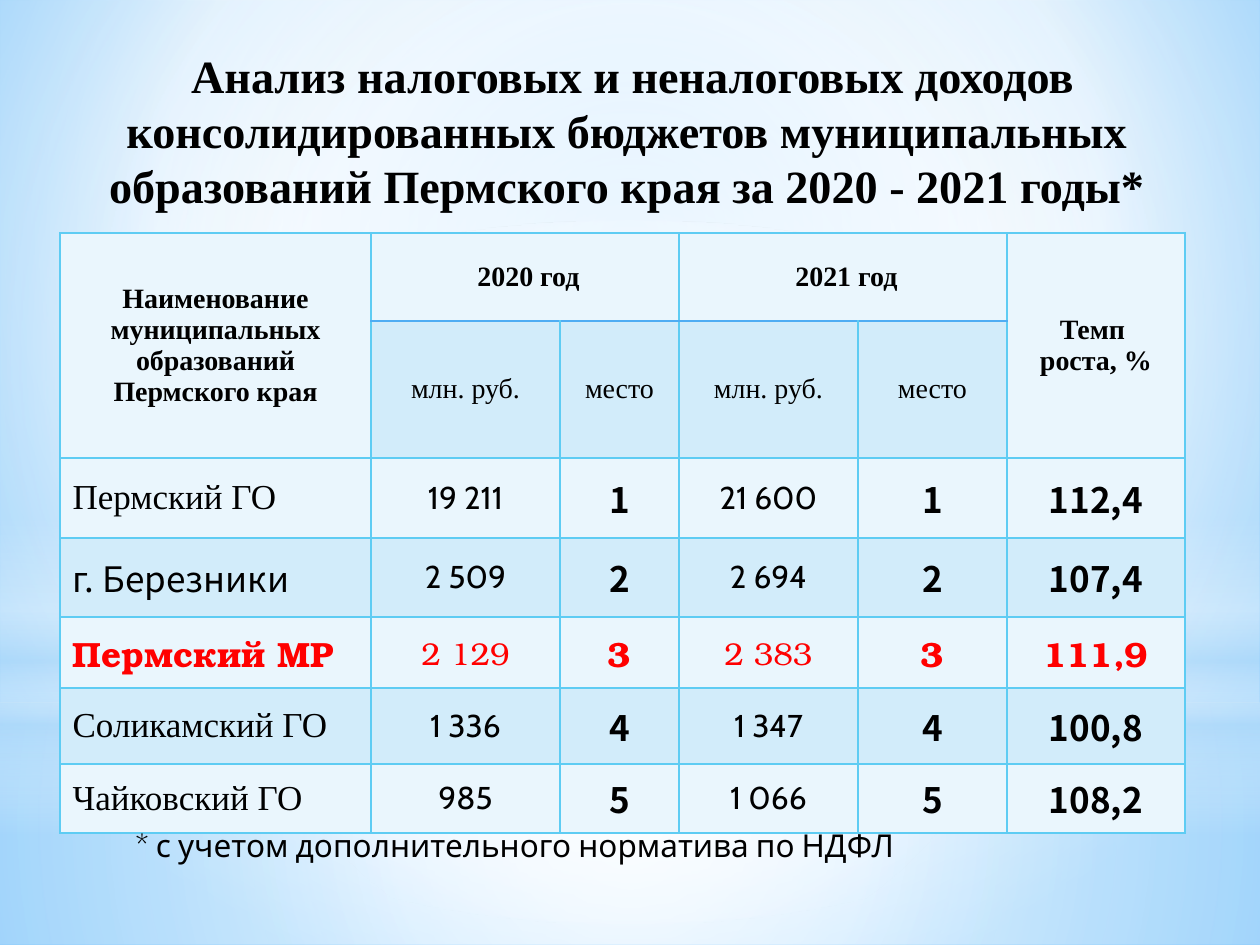
"""Build a slide comparing municipal budget revenues for 2020 and 2021."""
from lxml import etree
from pptx import Presentation, util as u
from pptx.dml.color import RGBColor
from pptx.enum import shapes, text
from pptx.oxml import parse_xml
from pptx.oxml.ns import nsdecls, qn

TITLE = (" Анализ налоговых и неналоговых доходов консолидированных бюджетов "
         "муниципальных образований Пермского края за 2020 - 2021 годы*")
FOOTNOTE = "* с учетом дополнительного норматива по НДФЛ"
SERIF, SANS, ROUND, BOOK = "Times New Roman", "Noto Sans CJK KR", "Cabin", "TeX Gyre Bonum"
BLACK, RED = RGBColor(0, 0, 0), RGBColor(0xFF, 0, 0)
LIGHT, TINT = RGBColor(0xEA, 0xF6, 0xFD), RGBColor(0xD2, 0xEC, 0xFA)
BORDER, HEADER_RULE = RGBColor(0x5E, 0xCC, 0xF3), RGBColor(0x4F, 0xAD, 0xF3)
WHITE, HAZE = RGBColor(255, 255, 255), RGBColor(0xB4, 0xDC, 0xFA)
SKY, AZURE = RGBColor(0x9E, 0xD5, 0xFF), RGBColor(0x5B, 0xB9, 0xFF)

HEADINGS = [
    (0, 0, 1, 0, ["Наименование муниципальных образований Пермского края"]),
    (0, 1, 0, 2, [" 2020 год"]),
    (0, 3, 0, 4, [" 2021 год"]),
    (0, 5, 1, 5, ["Темп ", "роста, %"]),
]
SUBHEADINGS = ["млн. руб.", "место"] * 2
RESULTS = [
    ("Пермский ГО", "19 211", "1", "21 600", "1", "112,4"),
    ("г. Березники", "2 509", "2", "2 694", "2", "107,4"),
    ("Пермский МР", "2 129", "3", "2 383", "3", "111,9"),
    ("Соликамский ГО", "1 336", "4", "1 347", "4", "100,8"),
    ("Чайковский ГО", "985", "5", "1 066", "5", "108,2"),
]
HIGHLIGHT = "Пермский МР"
NAME_FONTS = {"г. Березники": SANS, HIGHLIGHT: BOOK}
COLUMNS = [311, 189, 119, 179, 149, 178]
ROWS = [88, 102, 80, 79, 71, 76, 69]

CENTRE = (50, 50, 50, 50)
RECT, OVAL = shapes.MSO_SHAPE.RECTANGLE, shapes.MSO_SHAPE.OVAL
BACKDROP = ([(0, SKY, 100), (60, WHITE, 100), (100, AZURE, 100)], (20, 10, 20, 60))
GLOWS = [
    (RECT, (0, 703, 1260, 242),
     [(0, WHITE, 91), (37, WHITE, 76), (100, HAZE, 79)], CENTRE),
    (RECT, (0, 0, 1260, 703),
     [(0, WHITE, 89), (48, WHITE, 62), (100, HAZE, 79)], CENTRE),
    (RECT, (0, 519, 1260, 315),
     [(0, WHITE, 0), (29, WHITE, 30), (45, HAZE, 40), (55, WHITE, 26),
      (65, HAZE, 60), (100, WHITE, 0)], None),
    (OVAL, (0, 221, 1260, 703), [(0, WHITE, 100), (56, WHITE, 0)], CENTRE),
]


def px(length):
    return round(length * u.Inches(1) / 126)


def set_gradient(fill, properties, stops, focus):
    fill.solid()
    stop_xml = "".join(
        f'<a:gs pos="{pos * 1000}"><a:srgbClr val="{color}">'
        f'<a:alpha val="{alpha * 1000}"/></a:srgbClr></a:gs>'
        for pos, color, alpha in stops)
    if focus:
        sides = " ".join(f'{side}="{part * 1000}"' for side, part in zip("ltrb", focus))
        direction = f'<a:path path="circle"><a:fillToRect {sides}/></a:path>'
    else:
        direction = '<a:lin ang="5400000" scaled="0"/>'
    gradient = parse_xml(f'<a:gradFill {nsdecls("a")} rotWithShape="1">'
                         f'<a:gsLst>{stop_xml}</a:gsLst>{direction}</a:gradFill>')
    properties.replace(properties.find(qn("a:solidFill")), gradient)


def write(frame, lines, size, font, color=BLACK, bold=False, centred=True):
    for index, line in enumerate(lines):
        paragraph = frame.add_paragraph() if index else frame.paragraphs[0]
        paragraph.alignment = text.PP_ALIGN.CENTER if centred else text.PP_ALIGN.LEFT
        run = paragraph.add_run()
        run.text = line
        run.font.size, run.font.name, run.font.bold = u.Pt(size), font, bold
        run.font.color.rgb = color


def add_text(slide, box, line, **style):
    frame = slide.shapes.add_textbox(*map(px, box)).text_frame
    frame.word_wrap = True
    write(frame, [line], **style)
    return frame


def set_borders(cell, top, bottom):
    properties = cell._tc.get_or_add_tcPr()
    for side, color in zip("LRTB", (BORDER, BORDER, top, bottom)):
        line = etree.SubElement(properties, qn(f"a:ln{side}"), w=str(u.Pt(1)))
        solid = etree.SubElement(line, qn("a:solidFill"))
        etree.SubElement(solid, qn("a:srgbClr"), val=str(color))


def style_cells(table):
    for row in range(len(ROWS)):
        for column in range(len(COLUMNS)):
            cell = table.cell(row, column)
            inner = 0 < column < len(COLUMNS) - 1
            set_borders(cell, HEADER_RULE if inner and row == 1 else BORDER,
                        HEADER_RULE if inner and row == 0 else BORDER)
            cell.fill.solid()
            cell.fill.fore_color.rgb = TINT if row % 2 else LIGHT
            cell.vertical_anchor = text.MSO_ANCHOR.MIDDLE


def add_results(slide):
    table = slide.shapes.add_table(len(ROWS), len(COLUMNS), px(60), px(233),
                                   px(sum(COLUMNS)), px(sum(ROWS))).table
    for column, width in zip(table.columns, COLUMNS):
        column.width = px(width)
    for row, height in zip(table.rows, ROWS):
        row.height = px(height)
    style_cells(table)
    for top, left, bottom, right, lines in HEADINGS:
        table.cell(top, left).merge(table.cell(bottom, right))
        write(table.cell(top, left).text_frame, lines, 16, SERIF, bold=True)
    for column, heading in enumerate(SUBHEADINGS, 1):
        write(table.cell(1, column).text_frame, [heading], 16, SERIF)
    for row, result in enumerate(RESULTS, 2):
        name = result[0]
        marked = name == HIGHLIGHT
        for column, value in enumerate(result):
            amount = column in (1, 3)
            font = NAME_FONTS.get(name, SERIF) if column == 0 else ROUND if amount else SANS
            write(table.cell(row, column).text_frame, [value], 18 if amount else 20,
                  BOOK if marked else font, RED if marked else BLACK,
                  bold=marked if column == 0 else not amount, centred=column > 0)


def main():
    deck = Presentation()
    deck.slide_width, deck.slide_height = px(1260), px(945)
    slide = deck.slides.add_slide(deck.slide_layouts[6])
    backdrop = slide.background.fill
    backdrop.solid()
    set_gradient(backdrop, slide.element.find(".//" + qn("p:bgPr")), *BACKDROP)
    for kind, box, stops, focus in GLOWS:
        glow = slide.shapes.add_shape(kind, *map(px, box))
        glow.shadow.inherit = False
        glow.line.fill.background()
        set_gradient(glow.fill, glow.element.spPr, stops, focus)
    add_results(slide)
    title = add_text(slide, (60, 37, 1134, 186), TITLE, size=26.4, font=SERIF, bold=True)
    title.vertical_anchor = text.MSO_ANCHOR.MIDDLE
    footnote = add_text(slide, (123, 820, 1071, 50), FOOTNOTE,
                        size=18, font=ROUND, centred=False)
    footnote.auto_size = text.MSO_AUTO_SIZE.SHAPE_TO_FIT_TEXT
    deck.save("out.pptx")


if __name__ == "__main__":
    main()
